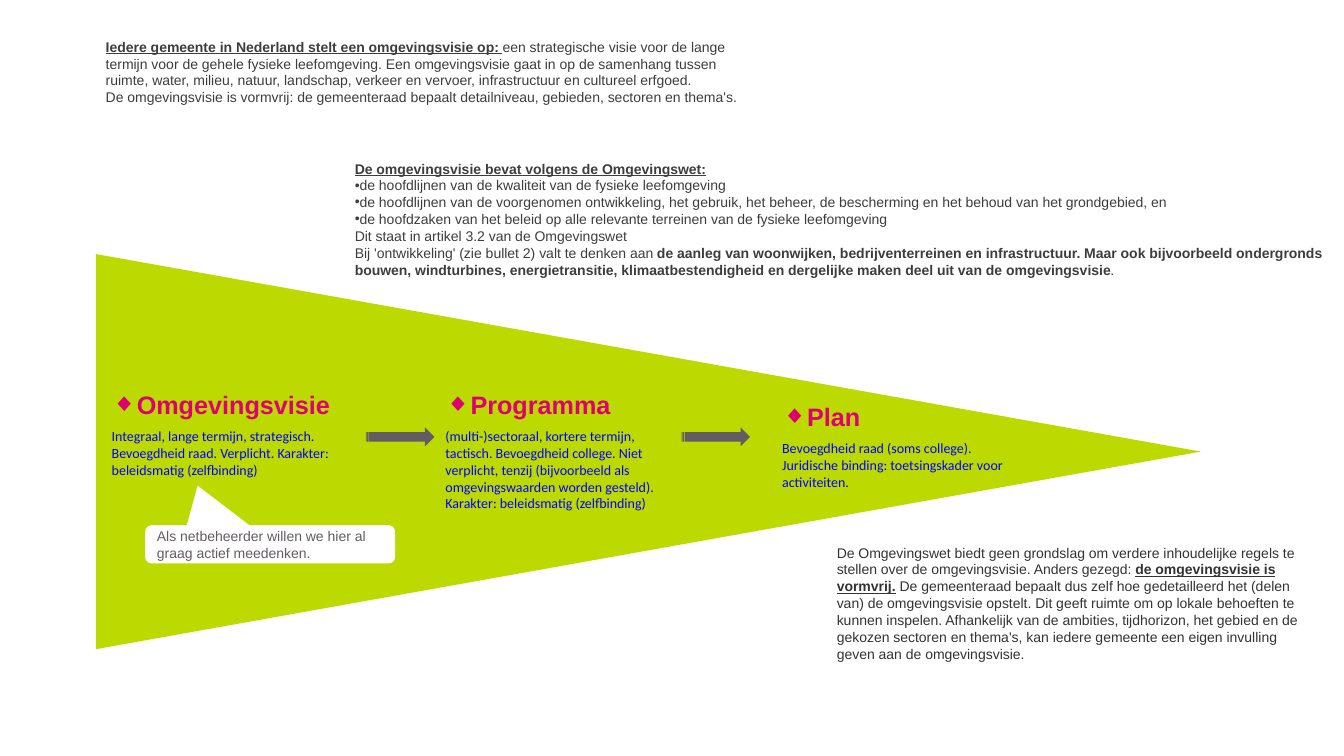
"""Build the slide on how a Dutch omgevingsvisie leads to programme and plan."""
from dataclasses import dataclass
from typing import Optional

from lxml.etree import SubElement
from pptx import Presentation
from pptx.dml.color import RGBColor
from pptx.enum.shapes import MSO_SHAPE
from pptx.enum.text import MSO_ANCHOR
from pptx.oxml.ns import qn
from pptx.util import Emu, Inches, Pt

SLIDE_WIDTH, SLIDE_HEIGHT = Inches(13.33), Inches(7.5)


@dataclass(frozen=True)
class Theme:
    """Colours, typefaces and type sizes of the slide."""
    lime: RGBColor = RGBColor(0xBD, 0xDA, 0x00)
    magenta: RGBColor = RGBColor(0xDE, 0x00, 0x73)
    blue: RGBColor = RGBColor(0x00, 0x00, 0xFF)
    stone: RGBColor = RGBColor(0x63, 0x5D, 0x63)
    ink: RGBColor = RGBColor(0x3D, 0x3C, 0x3F)
    charcoal: RGBColor = RGBColor(0x33, 0x33, 0x33)
    white: RGBColor = RGBColor(0xFF, 0xFF, 0xFF)
    sans: str = "Arial"
    detail: str = "Calibri"
    heading_size: Pt = Pt(18)
    body_size: Pt = Pt(10)
    gap: Pt = Pt(6)


THEME = Theme()


@dataclass(frozen=True)
class Area:
    """A rectangle in percentages of the slide's width and height."""
    left: float
    top: float
    width: float
    height: float

    def emu(self) -> tuple:
        """Return left, top, width and height as lengths."""
        return (Emu(round(SLIDE_WIDTH * self.left / 100)), Emu(round(SLIDE_HEIGHT * self.top / 100)),
                Emu(round(SLIDE_WIDTH * self.width / 100)), Emu(round(SLIDE_HEIGHT * self.height / 100)))


@dataclass(frozen=True)
class Style:
    """The character format of a run."""
    color: RGBColor
    name: str = THEME.sans
    size: Pt = THEME.body_size
    bold: bool = False
    underline: bool = False


@dataclass(frozen=True)
class Bullet:
    """A list mark with its margin and first-line indent."""
    mark: str
    color: RGBColor
    margin: Emu = Emu(0)
    indent: Emu = Emu(0)


@dataclass(frozen=True)
class Line:
    """A paragraph made of (text, style) pairs."""
    runs: tuple
    bullet: Optional[Bullet] = None
    gap: Pt = Pt(0)


@dataclass(frozen=True)
class Stage:
    """One step from vision to plan."""
    area: Area
    heading: str
    detail: str


@dataclass(frozen=True)
class Note:
    """A block of explanation outside the wedge."""
    area: Area
    lines: tuple


HEADING = Style(THEME.magenta, size=THEME.heading_size, bold=True)
DETAIL = Style(THEME.blue, name=THEME.detail)
PLAIN = Style(THEME.ink)
STRONG = Style(THEME.ink, bold=True)
TITLE = Style(THEME.ink, bold=True, underline=True)
CLOSING = Style(THEME.charcoal)
CLOSING_TITLE = Style(THEME.charcoal, bold=True, underline=True)
SPEECH = Style(THEME.stone)
DIAMOND = Bullet("◆", THEME.magenta, Inches(0.04), Inches(-0.28))
DOT = Bullet("•", THEME.ink)

WEDGE = Area(7.13, 33.6, 82.22, 52.27)
SPEECH_AREA = Area(10.8, 69.47, 18.6, 5.07)
ARROWS = [Area(left, 56.53, 5.1, 2.53) for left in (27.23, 50.71)]

STAGES = [
    Stage(Area(7.58, 50.8, 18.75, 16.67), "Omgevingsvisie",
          "Integraal, lange termijn, strategisch. Bevoegdheid raad. Verplicht. "
          "Karakter: beleidsmatig (zelfbinding)"),
    Stage(Area(32.41, 50.8, 17.25, 21.07), "Programma",
          "(multi-)sectoraal, kortere termijn, tactisch. Bevoegdheid college. Niet verplicht, tenzij "
          "(bijvoorbeeld als omgevingswaarden worden gesteld). Karakter: beleidsmatig (zelfbinding)"),
    Stage(Area(57.46, 52.4, 18.98, 13.2), "Plan",
          "Bevoegdheid raad (soms college). Juridische binding: toetsingskader voor activiteiten."),
]

NOTES = [
    Note(Area(7.13, 4.4, 48.99, 14.4), (
        Line((("Iedere gemeente in Nederland stelt een omgevingsvisie op: ", TITLE),
              ("een strategische visie voor de lange termijn voor de gehele fysieke leefomgeving. "
               "Een omgevingsvisie gaat in op de samenhang tussen ruimte, water, milieu, natuur, landschap, "
               "verkeer en vervoer, infrastructuur en cultureel erfgoed.", PLAIN))),
        Line((("De omgevingsvisie is vormvrij: de gemeenteraad bepaalt detailniveau, gebieden, "
               "sectoren en thema's.", PLAIN),)),
    )),
    Note(Area(25.66, 20.53, 77.34, 17.07), (
        Line((("De omgevingsvisie bevat volgens de Omgevingswet:", TITLE),)),
        Line((("de hoofdlijnen van de kwaliteit van de fysieke leefomgeving", PLAIN),), DOT),
        Line((("de hoofdlijnen van de voorgenomen ontwikkeling, het gebruik, het beheer, de bescherming "
               "en het behoud van het grondgebied, en", PLAIN),), DOT),
        Line((("de hoofdzaken van het beleid op alle relevante terreinen van de fysieke leefomgeving",
               PLAIN),), DOT),
        Line((("Dit staat in artikel 3.2 van de Omgevingswet", PLAIN),)),
        Line((("Bij 'ontwikkeling' (zie bullet 2) valt te denken aan", PLAIN),
              (" de aanleg van woonwijken, bedrijventerreinen en infrastructuur. Maar ook bijvoorbeeld "
               "ondergronds bouwen, windturbines, energietransitie, klimaatbestendigheid en dergelijke "
               "maken deel uit van de omgevingsvisie", STRONG),
              (".", PLAIN))),
    )),
    Note(Area(61.52, 71.33, 36.68, 17.07), (
        Line((("De Omgevingswet biedt geen grondslag om verdere inhoudelijke regels te stellen over de "
               "omgevingsvisie. Anders gezegd: ", CLOSING),
              ("de omgevingsvisie is vormvrij.", CLOSING_TITLE),
              (" De gemeenteraad bepaalt dus zelf hoe gedetailleerd het (delen van) de omgevingsvisie "
               "opstelt. Dit geeft ruimte om op lokale behoeften te kunnen inspelen. Afhankelijk van de "
               "ambities, tijdhorizon, het gebied en de gekozen sectoren en thema's, kan iedere gemeente "
               "een eigen invulling geven aan de omgevingsvisie.", CLOSING))),
    )),
]


def add_bullet(paragraph, bullet: Bullet) -> None:
    """Give a paragraph its list mark."""
    properties = paragraph._p.get_or_add_pPr()
    properties.set("marL", str(int(bullet.margin)))
    properties.set("indent", str(int(bullet.indent)))
    color = SubElement(properties, qn("a:buClr"))
    SubElement(color, qn("a:srgbClr"), val=str(bullet.color))
    SubElement(properties, qn("a:buFont"), typeface=THEME.sans)
    SubElement(properties, qn("a:buChar"), char=bullet.mark)


def write_lines(frame, lines: tuple) -> None:
    """Fill a text frame with formatted paragraphs."""
    frame.word_wrap = True
    for index, line in enumerate(lines):
        paragraph = frame.add_paragraph() if index else frame.paragraphs[0]
        if line.bullet:
            add_bullet(paragraph, line.bullet)
        paragraph.space_after = line.gap
        for text, style in line.runs:
            run = paragraph.add_run()
            run.text = text
            formats = {"name": style.name, "size": style.size,
                       "bold": style.bold, "underline": style.underline}
            for attribute, value in formats.items():
                setattr(run.font, attribute, value)
            run.font.color.rgb = style.color


def add_text(slide, area: Area, lines: tuple) -> None:
    """Place a block of text on the slide."""
    write_lines(slide.shapes.add_textbox(*area.emu()).text_frame, lines)


def add_figure(slide, preset: MSO_SHAPE, bounds: tuple, fill: RGBColor):
    """Place a flat preset shape on the slide."""
    figure = slide.shapes.add_shape(preset, *bounds)
    figure.shadow.inherit = False
    figure.fill.solid()
    figure.fill.fore_color.rgb = fill
    figure.line.fill.background()
    return figure


def add_wedge(slide, area: Area) -> None:
    """Draw the triangle that narrows to the right within the area."""
    left, top, width, height = area.emu()
    shift = (width - height) // 2
    wedge = add_figure(slide, MSO_SHAPE.FLOWCHART_EXTRACT,
                       (left + shift, top - shift, height, width), THEME.lime)
    wedge.rotation = 90


def add_speech(slide, area: Area) -> None:
    """Draw the grid operator's callout pointing at the vision."""
    speech = add_figure(slide, MSO_SHAPE.ROUNDED_RECTANGULAR_CALLOUT, area.emu(), THEME.white)
    for index, value in enumerate((-0.29, -1.53, 0.17)):
        speech.adjustments[index] = value
    speech.text_frame.vertical_anchor = MSO_ANCHOR.MIDDLE
    message = "Als netbeheerder willen we hier al graag actief meedenken."
    write_lines(speech.text_frame, (Line(((message, SPEECH),), gap=THEME.gap),))
    speech.text_frame.paragraphs[0].alignment = 1


def main() -> None:
    """Build and save the presentation."""
    presentation = Presentation()
    presentation.slide_width, presentation.slide_height = SLIDE_WIDTH, SLIDE_HEIGHT
    slide = presentation.slides.add_slide(presentation.slide_layouts[6])
    add_wedge(slide, WEDGE)
    for stage in STAGES:
        add_text(slide, stage.area, (Line(((stage.heading, HEADING),), DIAMOND, THEME.gap),
                                     Line(((stage.detail, DETAIL),), gap=THEME.gap)))
    for arrow in ARROWS:
        add_figure(slide, MSO_SHAPE.STRIPED_RIGHT_ARROW, arrow.emu(), THEME.stone)
    for note in NOTES:
        add_text(slide, note.area, note.lines)
    add_speech(slide, SPEECH_AREA)
    presentation.save("out.pptx")


if __name__ == "__main__":
    main()
